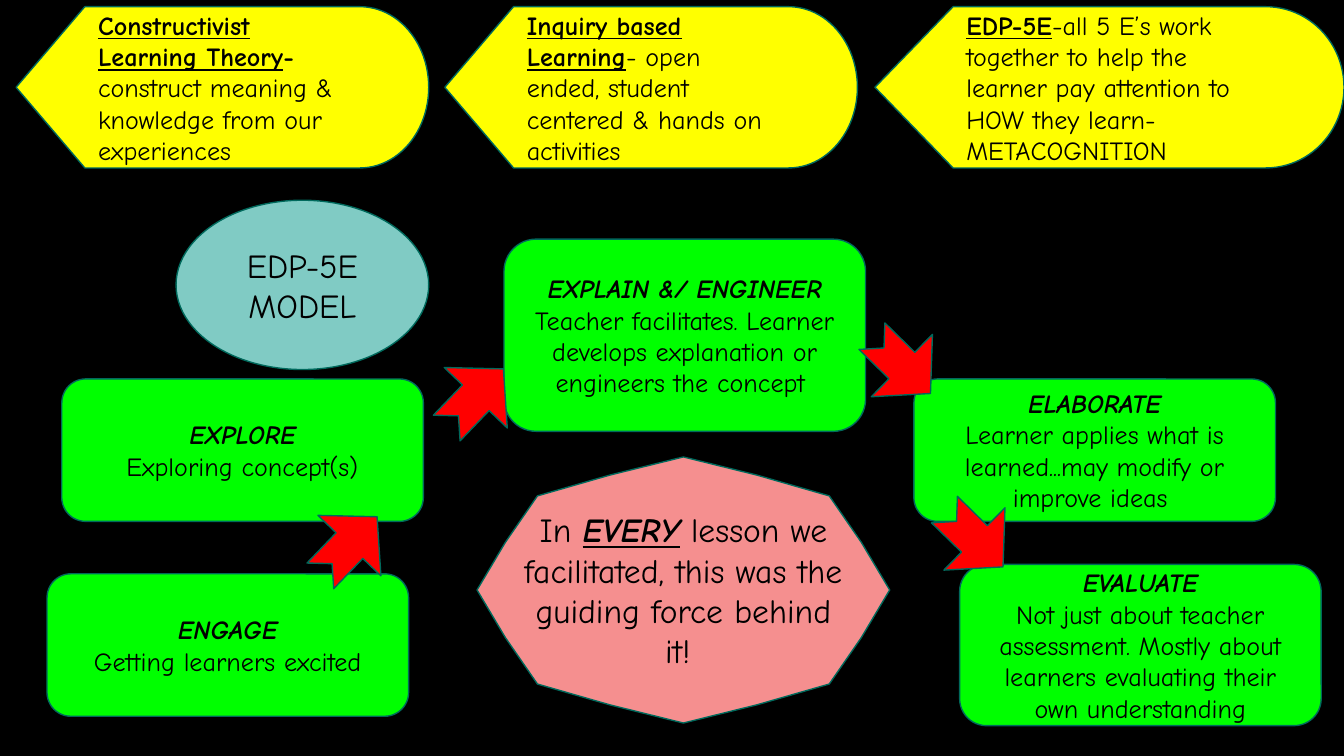
from dataclasses import dataclass

from pptx import Presentation
from pptx import util as u
from pptx.dml.color import RGBColor
from pptx.enum import shapes, text

# The slide is a grid of 100 columns by 56.25 rows (16:9)
COLS, ROWS = 100, 56.25
CELL = u.Inches(0.1)
FACE = "Comic Neue"
BLACK, TEAL = "000000", "00695C"
YELLOW, GREEN, RED = "FFFF00", "00FF00", "FF0000"
KIND = shapes.MSO_SHAPE
LEFT, MID = text.PP_ALIGN.LEFT, text.PP_ALIGN.CENTER


@dataclass
class Box:
    col: float
    row: float
    wide: float
    high: float


@dataclass
class Run:
    words: str
    marks: str = ""  # any of b, i, u


@dataclass
class Step:
    box: Box
    name: str
    note: str


@dataclass
class Arrow:
    col: float
    row: float
    turn: float


@dataclass
class Idea:
    col: float
    wide: float
    runs: list[Run]


def paint(fill, tone: str) -> None:
    fill.solid()
    fill.fore_color.rgb = RGBColor.from_string(tone)


def draw(slide, kind, box: Box, tone: str, adj: tuple = ()):
    sides = (box.col, box.row, box.wide, box.high)
    shape = slide.shapes.add_shape(kind, *(round(n * CELL) for n in sides))
    shape.shadow.inherit = False
    paint(shape.fill, tone)
    paint(shape.line.fill, TEAL)
    shape.line.width = u.Pt(0.75)
    for i, share in enumerate(adj):
        shape.adjustments[i] = share
    return shape


def write(shape, paras: list[list[Run]], size: int, align=MID) -> None:
    frame = shape.text_frame
    frame.word_wrap = True
    frame.vertical_anchor = text.MSO_ANCHOR.MIDDLE
    frame.margin_left = frame.margin_right = CELL
    frame.margin_top = frame.margin_bottom = CELL
    for i, runs in enumerate(paras):
        para = frame.add_paragraph() if i else frame.paragraphs[0]
        para.alignment = align
        para.font.name, para.font.size = FACE, u.Pt(size)
        paint(para.font.fill, BLACK)
        for item in runs:
            run = para.add_run()
            run.text = item.words
            run.font.bold = "b" in item.marks
            run.font.italic = "i" in item.marks
            run.font.underline = "u" in item.marks


STEPS = [
    Step(Box(4.6, 28.2, 26.9, 10.6), "EXPLORE", "Exploring concept(s)"),
    Step(Box(68, 28.2, 26.9, 10.6), "ELABORATE",
         "Learner applies what is learned...may modify or improve ideas "),
    Step(Box(37.5, 17.8, 26.9, 14.3), "EXPLAIN &/ ENGINEER",
         "Teacher facilitates. Learner develops explanation or "
         "engineers the concept "),
    Step(Box(71.4, 42, 26.9, 12), "EVALUATE",
         "Not just about teacher assessment. Mostly about learners "
         "evaluating their own understanding"),
    Step(Box(3.5, 42.7, 26.9, 10.6), "ENGAGE", "Getting learners excited"),
]

UP, DOWN = 313.8, 44.4
ARROWS = [Arrow(22.9, 37.4, UP), Arrow(32.3, 26.4, UP),
          Arrow(64, 23.9, DOWN), Arrow(69.4, 36.8, DOWN)]

IDEAS = [
    Idea(1.2, 30.7, [
        Run("Constructivist Learning Theory", "bu"), Run("- ", "b"),
        Run("construct meaning & knowledge from our experiences")]),
    Idea(33.1, 30.7, [
        Run("Inquiry based Learning", "bu"),
        Run("- open ended, student centered & hands on activities")]),
    Idea(65.1, 34.9, [
        Run("EDP-5E", "bu"),
        Run("-all 5 E’s work together to help the learner pay attention "
            "to HOW they learn- METACOGNITION")]),
]


def main() -> None:
    deck = Presentation()
    deck.slide_width, deck.slide_height = COLS * CELL, round(ROWS * CELL)
    slide = deck.slides.add_slide(deck.slide_layouts[6])
    paint(slide.background.fill, BLACK)

    # Model title
    title = draw(slide, KIND.OVAL, Box(13.1, 14.9, 18.8, 12.6), "80CBC4")
    write(title, [[Run("EDP-5E MODEL")]], 18)

    # The five steps
    for step in STEPS:
        card = draw(slide, KIND.ROUNDED_RECTANGLE, step.box, GREEN, (0.167,))
        write(card, [[Run(step.name, "bi")], [Run(step.note)]], 14)

    # Arrows from step to step
    for arrow in ARROWS:
        mark = draw(slide, KIND.NOTCHED_RIGHT_ARROW,
                    Box(arrow.col, arrow.row, 6.1, 6.5), RED, (0.424, 0.488))
        mark.rotation = arrow.turn

    # Ideas along the top
    for idea in IDEAS:
        flag = draw(slide, KIND.FLOWCHART_DISPLAY,
                    Box(idea.col, 0.5, idea.wide, 12), YELLOW)
        write(flag, [idea.runs], 14, LEFT)

    # Closing remark
    star = draw(slide, KIND.STAR_8_POINT, Box(35.5, 34, 30.7, 19.8),
                "F58F8F", (0.467,))
    write(star, [[Run("In "), Run("EVERY", "biu"),
                  Run(" lesson we facilitated, this was the guiding force "
                      "behind it! ")]], 18)

    deck.save("out.pptx")


if __name__ == "__main__":
    main()
